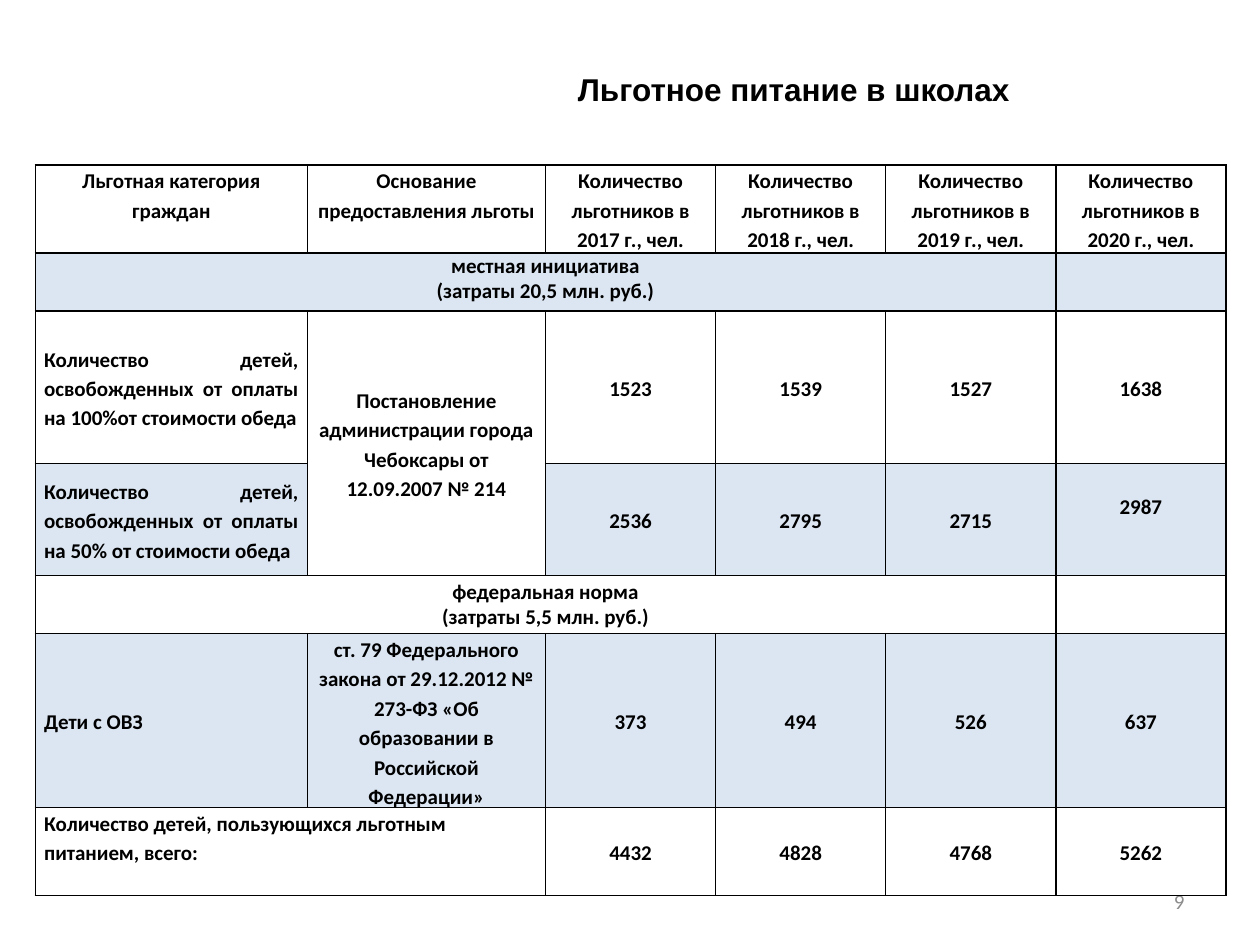
from lxml import etree
from pptx import Presentation
from pptx.dml.color import RGBColor
from pptx.enum.text import MSO_ANCHOR, PP_ALIGN
from pptx.oxml.ns import qn
from pptx.util import Inches, Pt

BLACK = RGBColor(0x00, 0x00, 0x00)
GRAY = RGBColor(0x8C, 0x8C, 0x8C)
BAND = RGBColor(0xDC, 0xE6, 0xF2)


def write(frame, text, size=12, font="Calibri", color=BLACK, bold=True,
          align=PP_ALIGN.CENTER, space=None):
    frame.word_wrap = True
    for i, line in enumerate(text.split("\n")):
        para = frame.add_paragraph() if i else frame.paragraphs[0]
        para.alignment = align
        para.line_spacing = space
        run = para.add_run()
        run.text = line
        run.font.size = Pt(size)
        run.font.name = font
        run.font.bold = bold
        run.font.color.rgb = color


def outline(cell):
    props = cell._tc.get_or_add_tcPr()
    for i, side in enumerate(("lnL", "lnR", "lnT", "lnB")):
        line = etree.Element(qn("a:" + side), w=str(Pt(1)))
        fill = etree.SubElement(line, qn("a:solidFill"))
        etree.SubElement(fill, qn("a:srgbClr"), val=str(BLACK))
        props.insert(i, line)


deck = Presentation()
deck.slide_width = Inches(10)
deck.slide_height = Inches(7.5)
slide = deck.slides.add_slide(deck.slide_layouts[6])

number = slide.shapes.add_textbox(Inches(7.17), Inches(6.95), Inches(2.33), Inches(0.4))
number.text_frame.vertical_anchor = MSO_ANCHOR.MIDDLE
write(number.text_frame, "9", color=GRAY, bold=False, align=PP_ALIGN.RIGHT)

title = slide.shapes.add_textbox(Inches(2.4), Inches(0.51), Inches(7.8), Inches(0.55))
write(title.text_frame, "Льготное питание в школах", size=18, font="Arial")

years = [f"Количество льготников в {year} г., чел." for year in range(2017, 2021)]
rows = [
    ["Льготная категория граждан", "Основание предоставления льготы"] + years,
    ["местная инициатива\n(затраты 20,5 млн. руб.)"] + [""] * 5,
    ["Количество детей, освобожденных от оплаты на 100%от стоимости обеда",
     "Постановление администрации города Чебоксары от 12.09.2007 № 214",
     "1523", "1539", "1527", "1638"],
    ["Количество детей, освобожденных от оплаты на 50% от стоимости обеда",
     "", "2536", "2795", "2715", "2987"],
    ["федеральная норма\n(затраты 5,5 млн. руб.)"] + [""] * 5,
    ["Дети с ОВЗ",
     "ст. 79 Федерального закона от 29.12.2012 № 273-ФЗ «Об образовании в Российской Федерации»",
     "373", "494", "526", "637"],
    ["Количество детей, пользующихся льготным питанием, всего:",
     "", "4432", "4828", "4768", "5262"],
]
widths = [2.16, 1.89] + [1.35] * 4
heights = [0.7, 0.46, 1.21, 0.89, 0.46, 1.34, 0.7]
heads = (1, 4)
bands = (1, 3, 5)
aligns = {2: PP_ALIGN.JUSTIFY, 3: PP_ALIGN.JUSTIFY, 5: PP_ALIGN.JUSTIFY, 6: PP_ALIGN.LEFT}
raised = ((3, 5), (6, 0))

table = slide.shapes.add_table(len(rows), len(widths), Inches(0.28), Inches(1.31),
                               Inches(sum(widths)), Inches(sum(heights))).table
for col, width in zip(table.columns, widths):
    col.width = Inches(width)
for row, height in zip(table.rows, heights):
    row.height = Inches(height)

for r, row in enumerate(rows):
    for c, text in enumerate(row):
        cell = table.cell(r, c)
        cell.margin_left = cell.margin_right = Inches(0.07)
        cell.margin_top = 0
        cell.margin_bottom = Inches(0.23 if (r, c) in raised else 0)
        cell.vertical_anchor = MSO_ANCHOR.TOP if r < 2 else MSO_ANCHOR.MIDDLE
        if r in bands:
            cell.fill.solid()
            cell.fill.fore_color.rgb = BAND
        else:
            cell.fill.background()
        outline(cell)
        if text:
            align = PP_ALIGN.CENTER if c else aligns.get(r, PP_ALIGN.CENTER)
            write(cell.text_frame, text, align=align, space=None if r in heads else 1.15)

for r in heads:
    table.cell(r, 0).merge(table.cell(r, 4))
table.cell(2, 1).merge(table.cell(3, 1))
table.cell(6, 0).merge(table.cell(6, 1))

deck.save("out.pptx")
